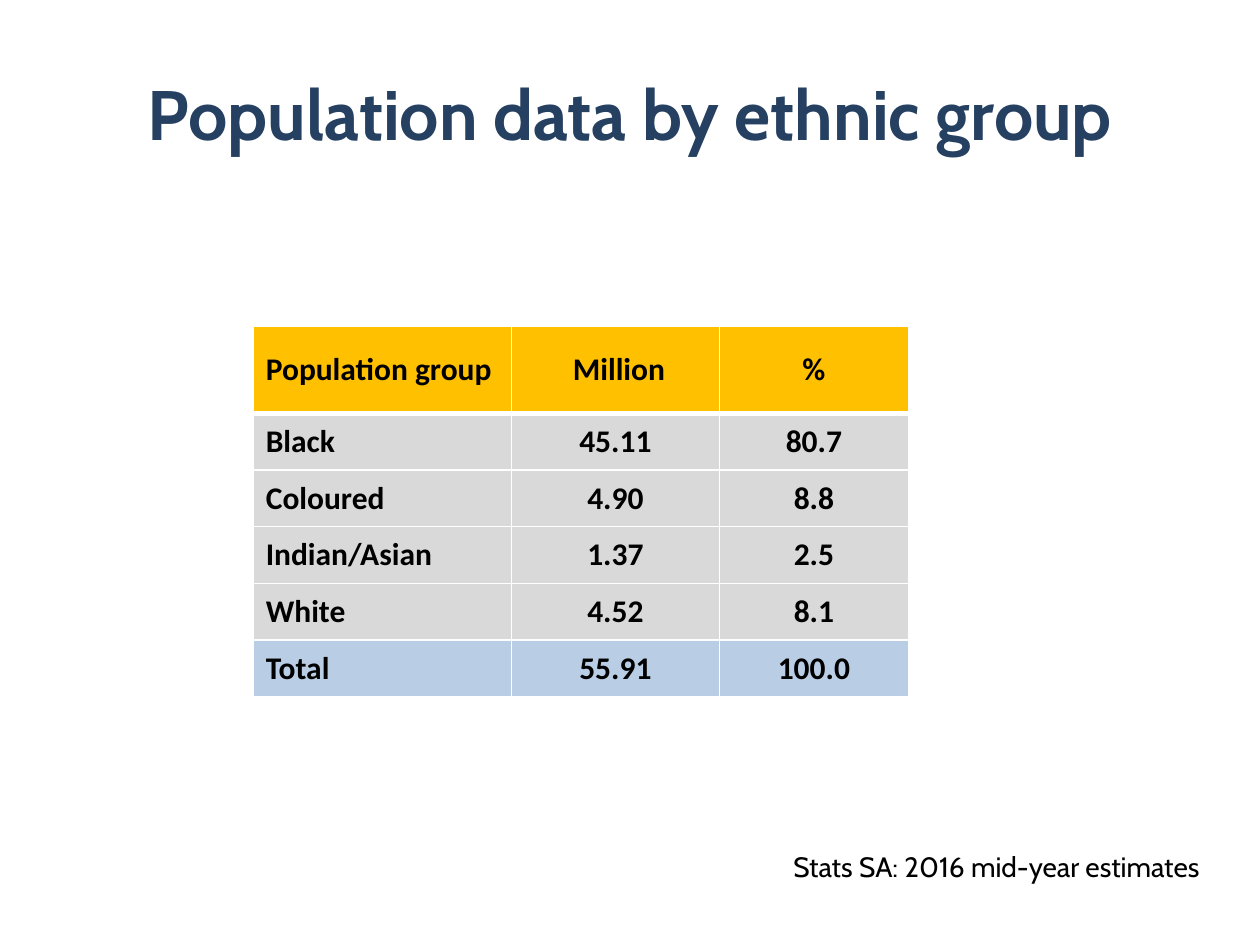
from lxml.etree import SubElement
from pptx import Presentation
from pptx.dml.color import RGBColor
from pptx.enum.text import MSO_ANCHOR, PP_ALIGN
from pptx.oxml.ns import qn
from pptx.util import Inches, Pt

COLORS = {
    "title": "254061",
    "text": "000000",
    "header": "FFC000",
    "group": "D9D9D9",
    "total": "B9CDE5",
    "border": "FFFFFF",
}
POPULATION = [
    ("Population group", " Million", "%"),
    ("Black", "45.11", "80.7"),
    ("Coloured", "4.90", "8.8"),
    ("Indian/Asian", "1.37", "2.5"),
    ("White", "4.52", "8.1"),
    ("Total", "55.91", "100.0"),
]
COLUMN_WIDTHS = (2.05, 1.65, 1.5)
HEADER_HEIGHT = 0.69


def write_text(frame, text, size, font="Cabin", color="text", bold=False,
               align=PP_ALIGN.LEFT):
    paragraph = frame.paragraphs[0]
    paragraph.alignment = align
    run = paragraph.add_run()
    run.text = text
    run.font.name = font
    run.font.size = Pt(size)
    run.font.bold = bold
    run.font.color.rgb = RGBColor.from_string(COLORS[color])


def add_text_box(slide, box, text, anchor=MSO_ANCHOR.TOP, **text_format):
    frame = slide.shapes.add_textbox(*map(Inches, box)).text_frame
    frame.word_wrap = True
    frame.vertical_anchor = anchor
    write_text(frame, text, **text_format)


def set_borders(cell, **widths):
    """Draw solid cell borders; widths are points by side: L, R, T, B."""
    properties = cell._tc.get_or_add_tcPr()
    for side, width in widths.items():
        line = SubElement(properties, qn(f"a:ln{side}"), w=str(Pt(width)))
        fill = SubElement(line, qn("a:solidFill"))
        SubElement(fill, qn("a:srgbClr"), val=COLORS["border"])


def add_population_table(slide, box):
    row_count = len(POPULATION)
    table = slide.shapes.add_table(
        row_count, len(COLUMN_WIDTHS), *map(Inches, box)).table
    for column, width in zip(table.columns, COLUMN_WIDTHS):
        column.width = Inches(width)
    group_height = (box[3] - HEADER_HEIGHT) / (row_count - 1)

    for row, values in enumerate(POPULATION):
        table.rows[row].height = Inches(group_height if row else HEADER_HEIGHT)
        fill_color = {0: "header", row_count - 1: "total"}.get(row, "group")
        for column, value in enumerate(values):
            cell = table.cell(row, column)
            cell.vertical_anchor = MSO_ANCHOR.MIDDLE
            set_borders(cell, L=1, R=1, T=3 if row == 1 else 1,
                        B=3 if row == 0 else 1)
            cell.fill.solid()
            cell.fill.fore_color.rgb = RGBColor.from_string(COLORS[fill_color])
            write_text(cell.text_frame, value, size=18, font="Calibri", bold=True,
                       align=PP_ALIGN.CENTER if column else PP_ALIGN.LEFT)


def main():
    presentation = Presentation()
    presentation.slide_width = Inches(10)
    presentation.slide_height = Inches(7.5)
    slide = presentation.slides.add_slide(presentation.slide_layouts[6])
    add_text_box(slide, (0.12, 0.38, 9.76, 1.02), "Population data by ethnic group",
                 anchor=MSO_ANCHOR.MIDDLE, size=40, color="title", bold=True,
                 align=PP_ALIGN.CENTER)
    add_population_table(slide, (2.01, 2.59, 5.2, 2.94))
    add_text_box(slide, (1.61, 6.69, 8.01, 0.37), "Stats SA: 2016 mid-year estimates",
                 size=16, align=PP_ALIGN.RIGHT)
    presentation.save("out.pptx")


if __name__ == "__main__":
    main()
